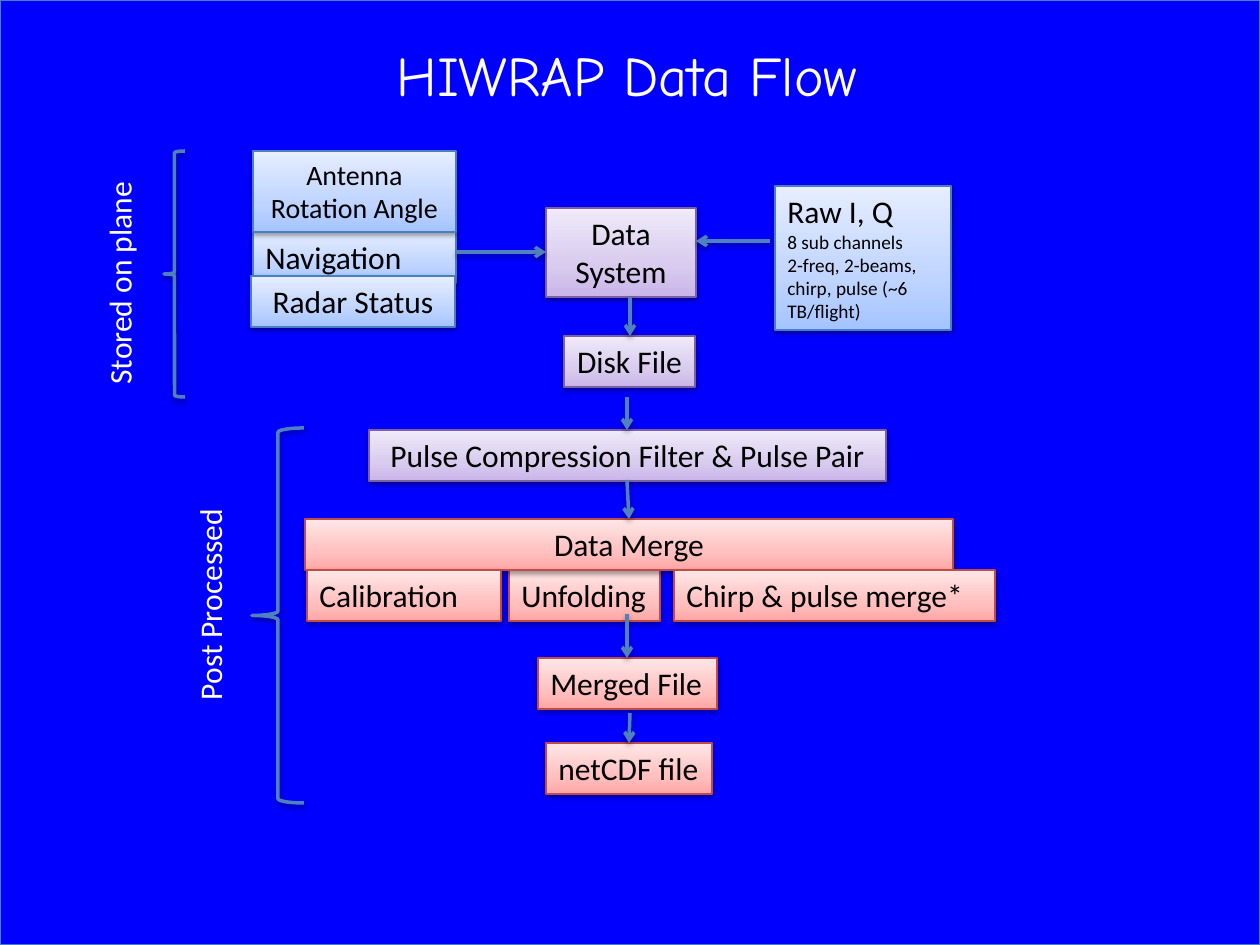
from copy import deepcopy

from lxml.etree import SubElement
from pptx import Presentation
from pptx.dml.color import RGBColor
from pptx.enum.shapes import MSO_CONNECTOR, MSO_SHAPE
from pptx.enum.text import MSO_ANCHOR, MSO_AUTO_SIZE, PP_ALIGN
from pptx.oxml.ns import qn
from pptx.util import Pt

SCALE = 914400 / 126
ROW = 51
WHITE = RGBColor(0xFF, 0xFF, 0xFF)
BLACK = RGBColor(0x00, 0x00, 0x00)
BACKDROP = RGBColor(0x00, 0x00, 0xFF)
EDGE = RGBColor(0x4B, 0x7E, 0xBC)
FLOW = RGBColor(0x4F, 0x81, 0xBD)
STAGES = {
    "input": (EDGE, [(0, RGBColor(0xA4, 0xC4, 0xFF)), (0.35, RGBColor(0xBF, 0xD4, 0xFF)),
                     (1, RGBColor(0xE6, 0xEE, 0xFF))]),
    "system": (RGBColor(0x7D, 0x60, 0xA0),
               [(0, RGBColor(0xC9, 0xB5, 0xE8)), (0.35, RGBColor(0xD8, 0xCB, 0xEE)),
                (1, RGBColor(0xF0, 0xEA, 0xF9))]),
    "product": (RGBColor(0xBF, 0x4C, 0x48),
                [(0, RGBColor(0xFF, 0xA6, 0xA5)), (0.35, RGBColor(0xFF, 0xC0, 0xBF)),
                 (1, RGBColor(0xFF, 0xE7, 0xE7))]),
}
LEFT, CENTER = PP_ALIGN.LEFT, PP_ALIGN.CENTER

TITLE = "HIWRAP Data Flow"
RAW_LINES = [("Raw I, Q", 18), ("8 sub channels", 11),
             ("2-freq, 2-beams, chirp, pulse (~6 TB/flight)", 11)]
STEPS = [
    ("input", (775, 186, 176, 144), RAW_LINES, LEFT, True),
    ("input", (253, 232, 203, ROW), [("Navigation", 18)], LEFT, True),
    ("input", (253, 151, 203, 81), [("Antenna Rotation Angle", 16)], CENTER, True),
    ("input", (251, 276, 204, ROW), [("Radar Status", 18)], CENTER, True),
    ("product", (538, 658, 179, ROW), [("Merged File", 18)], LEFT, False),
    ("product", (509, 570, 151, ROW), [("Unfolding", 18)], LEFT, True),
    ("system", (369, 430, 517, ROW), [("Pulse Compression Filter & Pulse Pair", 18)], CENTER, True),
    ("product", (305, 519, 648, ROW), [("Data Merge", 18)], CENTER, True),
    ("product", (307, 570, 194, ROW), [("Calibration", 18)], LEFT, True),
    ("product", (674, 570, 321, ROW), [("Chirp & pulse merge*", 18)], LEFT, True),
    ("product", (546, 743, 166, ROW), [("netCDF file", 18)], LEFT, False),
    ("system", (564, 336, 131, ROW), [("Disk File", 18)], CENTER, False),
    ("system", (546, 208, 150, 89), [("Data System", 18)], CENTER, True),
]
ARROWS = [
    (456, 252, 546, 252), (770, 241, 696, 241), (630, 297, 630, 336),
    (627, 397, 627, 430), (627, 480, 629, 519), (627, 614, 627, 658),
    (630, 713, 629, 743),
]
PHASES = [
    ((164, 151, 21, 246), (4, 256, 231, ROW), "Stored on plane", False),
    ((252, 428, 52, 375), (101, 578, 218, ROW), "Post Processed", True),
]


def emu(lengths):
    return [round(length * SCALE) for length in lengths]


def apply(target, values):
    for name, value in values.items():
        setattr(target, name, value)


def set_line(part, color, width):
    part.line.color.rgb = color
    part.line.width = Pt(width)


def cast_shadow(part, alpha=38000, distance=20000):
    effects = SubElement(part._element.spPr, qn("a:effectLst"))
    shadow = SubElement(effects, qn("a:outerShdw"), blurRad="40000", dist=str(distance),
                        dir="5400000", rotWithShape="0")
    color = SubElement(shadow, qn("a:srgbClr"), val=str(BLACK))
    SubElement(color, qn("a:alpha"), val=str(alpha))


def fill_gradient(box, stops):
    box.fill.gradient()
    box.fill.gradient_angle = 90
    stop_list = box._element.spPr.find(".//" + qn("a:gsLst"))
    stop_list.insert(1, deepcopy(stop_list[0]))
    for stop, (position, color) in zip(box.fill.gradient_stops, stops):
        stop.color.rgb = color
        stop.position = position


def write(part, lines, color, align=LEFT, wrap=True, face="Calibri",
          anchor=MSO_ANCHOR.TOP, fit=MSO_AUTO_SIZE.SHAPE_TO_FIT_TEXT):
    frame = part.text_frame
    apply(frame, {"word_wrap": wrap, "vertical_anchor": anchor, "auto_size": fit})
    for index, (text, size) in enumerate(lines):
        paragraph = frame.add_paragraph() if index else frame.paragraphs[0]
        paragraph.alignment = align
        run = paragraph.add_run()
        run.text = text
        apply(run.font, {"name": face, "size": Pt(size)})
        run.font.color.rgb = color


def add_step(shapes, stage, place, lines, align, wrap):
    edge, stops = STAGES[stage]
    step = shapes.add_shape(MSO_SHAPE.RECTANGLE, *emu(place))
    fill_gradient(step, stops)
    set_line(step, edge, 0.75)
    cast_shadow(step)
    write(step, lines, BLACK, align, wrap)


def add_arrow(shapes, ends):
    arrow = shapes.add_connector(MSO_CONNECTOR.STRAIGHT, *emu(ends))
    set_line(arrow, FLOW, 2)
    SubElement(arrow._element.spPr.find(qn("a:ln")), qn("a:tailEnd"), type="arrow")
    cast_shadow(arrow)


def add_phase(shapes, brace_place, label_place, text, wrap):
    brace = shapes.add_shape(MSO_SHAPE.LEFT_BRACE, *emu(brace_place))
    brace.fill.background()
    set_line(brace, FLOW, 2)
    cast_shadow(brace)
    label = shapes.add_textbox(*emu(label_place))
    label.rotation = 270
    write(label, [(text, 18)], WHITE, wrap=wrap)


def main():
    deck = Presentation()
    width, height = emu((1260, 945))
    apply(deck, {"slide_width": width, "slide_height": height})
    shapes = deck.slides.add_slide(deck.slide_layouts[6]).shapes

    backdrop = shapes.add_shape(MSO_SHAPE.RECTANGLE, 0, 0, width, height)
    backdrop.fill.solid()
    backdrop.fill.fore_color.rgb = BACKDROP
    set_line(backdrop, EDGE, 0.75)
    cast_shadow(backdrop, 35000, 23000)

    title = shapes.add_textbox(*emu((60, -5, 1134, 158)))
    write(title, [(TITLE, 32)], WHITE, CENTER, face="Comic Neue",
          anchor=MSO_ANCHOR.MIDDLE, fit=MSO_AUTO_SIZE.NONE)

    for step in STEPS:
        add_step(shapes, *step)
    for ends in ARROWS:
        add_arrow(shapes, ends)
    for phase in PHASES:
        add_phase(shapes, *phase)

    deck.save("out.pptx")


if __name__ == "__main__":
    main()
